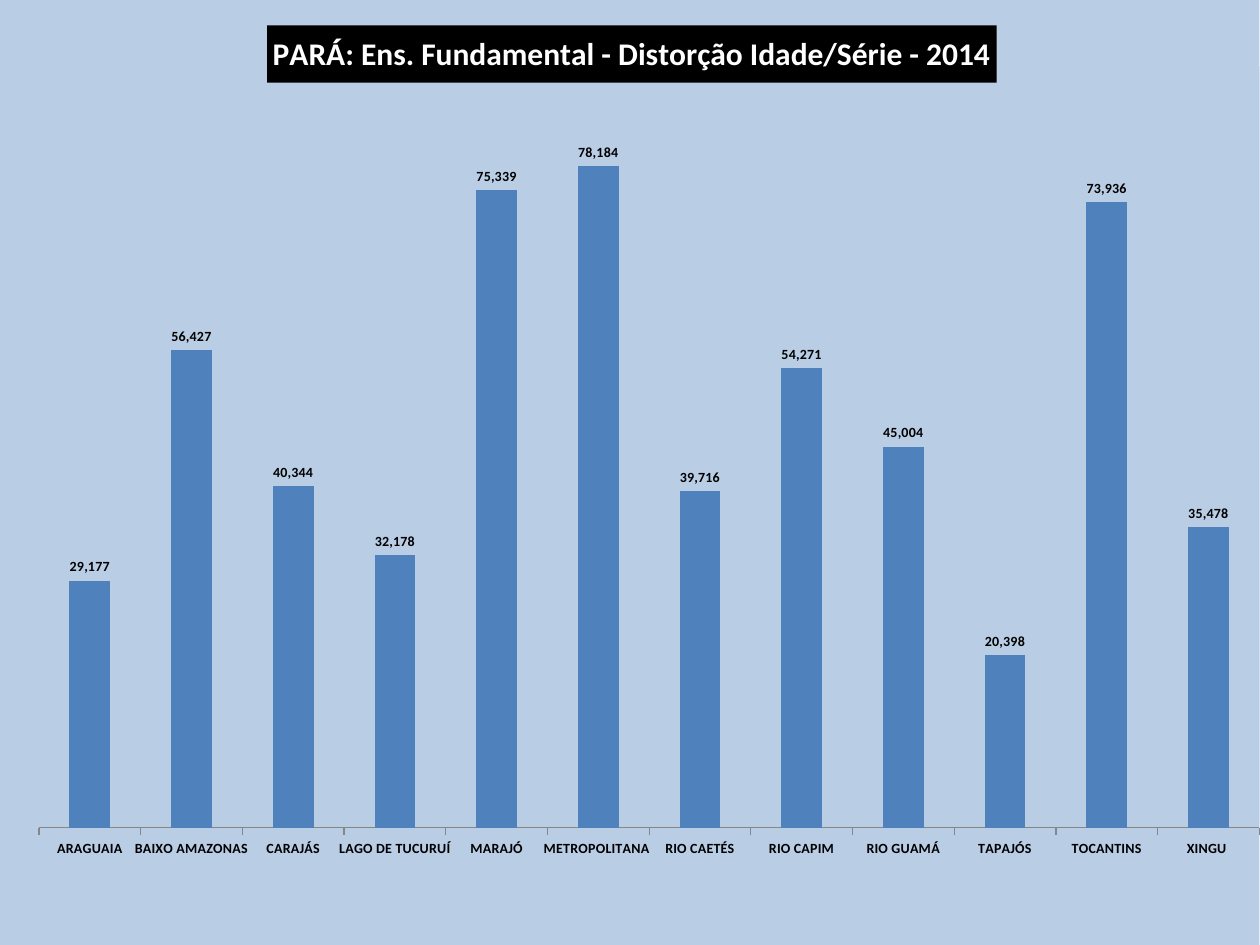
from typing import NamedTuple

from lxml.etree import SubElement
from pptx import Presentation
from pptx.chart.data import CategoryChartData
from pptx.dml.color import RGBColor
from pptx.enum.chart import XL_CHART_TYPE, XL_LABEL_POSITION, XL_TICK_LABEL_POSITION, XL_TICK_MARK
from pptx.oxml import parse_xml
from pptx.oxml.ns import nsdecls, qn
from pptx.util import Cm, Pt

FONT = "Calibri"
BACKGROUND = "B9CDE5"
BAR = "4F81BD"
AXIS = "868686"
BLACK = "000000"
WHITE = "FFFFFF"
NUMBER_FORMAT = '_(* #,##0_);_(* \\(#,##0\\);_(* "-"_);_(@_)'


class Region(NamedTuple):
    name: str
    students: int


REGIONS = [
    Region("ARAGUAIA", 29177),
    Region("BAIXO AMAZONAS", 56427),
    Region("CARAJÁS", 40344),
    Region("LAGO DE TUCURUÍ", 32178),
    Region("MARAJÓ", 75339),
    Region("METROPOLITANA ", 78184),
    Region("RIO CAETÉS", 39716),
    Region("RIO CAPIM", 54271),
    Region("RIO GUAMÁ", 45004),
    Region("TAPAJÓS", 20398),
    Region("TOCANTINS", 73936),
    Region("XINGU ", 35478),
]


def paint(fill, color: str) -> None:
    fill.solid()
    fill.fore_color.rgb = RGBColor.from_string(color)


def style_font(font, *, size: float, color: str = BLACK, bold: bool = False) -> None:
    font.name = FONT
    font.size = Pt(size)
    font.bold = bold
    paint(font.fill, color)


def write_text(tf, text: str, **font_format) -> None:
    r = tf.paragraphs[0].add_run()
    r.text = text
    style_font(r.font, **font_format)


def set_layout(layout, **values) -> None:
    """Fill a c:layout element with manual settings, in schema order."""
    for child in list(layout):
        layout.remove(child)
    manual = SubElement(layout, qn("c:manualLayout"))
    for tag, value in values.items():
        SubElement(manual, qn(f"c:{tag}")).set("val", str(value))


def area_format(color: str):
    return parse_xml(
        f'<c:spPr {nsdecls("c", "a")}><a:solidFill><a:srgbClr val="{color}"/></a:solidFill>'
        "<a:ln><a:noFill/></a:ln></c:spPr>"
    )


def add_region_chart(s, regions: list[Region], width: int, height: int):
    data = CategoryChartData(number_format=NUMBER_FORMAT)
    data.categories = [region.name for region in regions]
    data.add_series("Series 1", [region.students for region in regions])
    chart = s.shapes.add_chart(
        XL_CHART_TYPE.COLUMN_CLUSTERED, 0, 0, width, height, data
    ).chart
    chart.has_legend = False
    style_font(chart.font, size=10)

    # Bars and their labels
    plot = chart.plots[0]
    plot.gap_width = 150
    plot.vary_by_categories = False
    paint(plot.series[0].format.fill, BAR)
    plot.has_data_labels = True
    labels = plot.data_labels
    labels.show_value = True
    labels.position = XL_LABEL_POSITION.OUTSIDE_END
    labels.number_format = NUMBER_FORMAT
    labels.number_format_is_linked = False
    style_font(labels.font, size=8, bold=True)

    # Axes
    axis = chart.category_axis
    axis.major_tick_mark = XL_TICK_MARK.OUTSIDE
    axis.tick_label_position = XL_TICK_LABEL_POSITION.LOW
    axis.format.line.width = Pt(0.75)
    paint(axis.format.line.fill, AXIS)
    style_font(axis.tick_labels.font, size=8, bold=True)
    values = chart.value_axis
    values.minimum_scale = 0
    values.maximum_scale = 90000
    values.has_major_gridlines = False
    values.visible = False
    return chart


def add_title(chart, text: str) -> None:
    chart.has_title = True
    title = chart.chart_title
    title.include_in_layout = False
    write_text(title.text_frame, text, size=18, color=WHITE, bold=True)
    paint(title.format.fill, BLACK)
    layout = chart._chartSpace.find(".//" + qn("c:title") + "/" + qn("c:layout"))
    if layout is None:
        layout = parse_xml(f'<c:layout {nsdecls("c")}/>')
        chart._chartSpace.find(".//" + qn("c:title") + "/" + qn("c:tx")).addnext(layout)
    set_layout(layout, xMode="edge", yMode="edge", x=0.212, y=0.027)


def format_areas(chart) -> None:
    space = chart._chartSpace
    space.find(qn("c:chart")).addnext(area_format(BACKGROUND))
    plot_area = space.find(".//" + qn("c:plotArea"))
    plot_area.append(area_format(BACKGROUND))
    layout = plot_area.find(qn("c:layout"))
    if layout is None:
        layout = parse_xml(f'<c:layout {nsdecls("c")}/>')
        plot_area.insert(0, layout)
    set_layout(layout, layoutTarget="inner", xMode="edge", yMode="edge",
               x=0.031, y=0.07, w=0.969, h=0.806)


def main() -> None:
    prs = Presentation()
    prs.slide_width, prs.slide_height = Cm(25.4), Cm(19.05)
    s = prs.slides.add_slide(prs.slide_layouts[6])
    paint(s.background.fill, WHITE)

    # Chart over the whole slide
    chart = add_region_chart(s, REGIONS, prs.slide_width, prs.slide_height)
    add_title(chart, "PARÁ: Ens. Fundamental - Distorção Idade/Série - 2014")
    format_areas(chart)
    prs.save("out.pptx")


if __name__ == "__main__":
    main()
